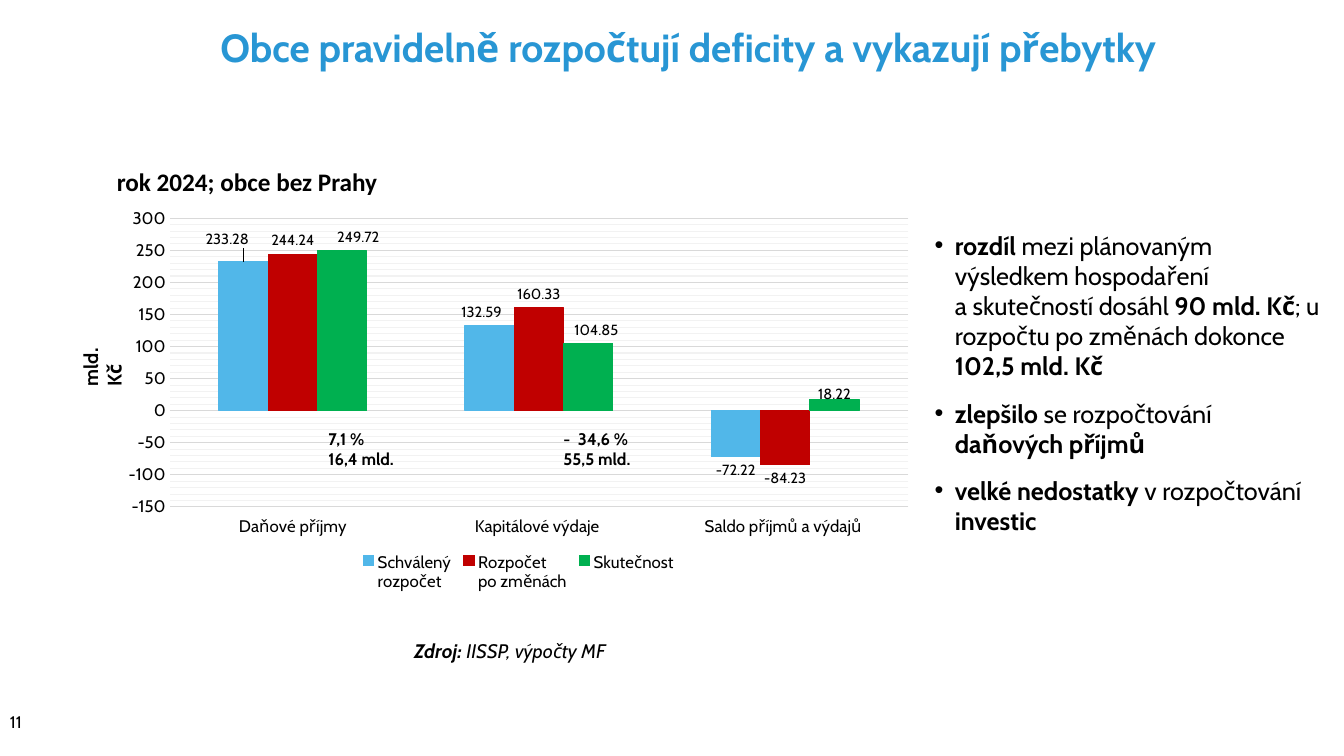
from dataclasses import dataclass

from lxml import etree
from pptx import Presentation
from pptx.chart.data import CategoryChartData
from pptx.dml.color import RGBColor
from pptx.enum import chart as ch, text
from pptx.oxml import ns
from pptx.util import Inches, Pt

BLACK = RGBColor(0x00, 0x00, 0x00)
TITLE_BLUE = RGBColor(0x28, 0x96, 0xD4)
SKY = RGBColor(0x51, 0xB7, 0xE9)
RED = RGBColor(0xC0, 0x00, 0x00)
GREEN = RGBColor(0x00, 0xB0, 0x50)
GRID = RGBColor(0xD9, 0xD9, 0xD9)
MINOR_GRID = RGBColor(0xF2, 0xF2, 0xF2)
FONT = "Cabin"


@dataclass
class Run:
    text: str
    bold: bool = False


@dataclass
class Label:
    left: float
    top: float
    width: float
    height: float
    lines: list[list[Run]]
    size: float = 12
    font: str = FONT
    italic: bool = False
    rotation: float = 0
    wrap: bool = False
    anchor: text.MSO_ANCHOR = text.MSO_ANCHOR.TOP


@dataclass
class Bars:
    name: str
    values: list[float]
    color: RGBColor
    shifts: dict[int, tuple[float, float]]  # label offsets, as shares of the chart


LABELS = [
    Label(0, 6.95, 0.48, 0.43, [[Run("11")]], wrap=True, anchor=text.MSO_ANCHOR.MIDDLE),
    Label(1.06, 1.6, 2.81, 0.4, [[Run("rok 2024; obce bez Prahy", True)]], 18, "Calibri"),
    Label(0.5, 3.36, 0.8, 0.34, [[Run("mld. Kč", True)]], 14, rotation=270, wrap=True),
    Label(4.01, 6.29, 2.22, 0.34,
          [[Run("Zdroj: ", True), Run("IISSP, výpočty MF")]], 14, italic=True),
    Label(3.16, 4.2, 0.93, 0.5, [[Run("7,1 %", True)], [Run("16,4 mld.", True)]]),
    Label(5.49, 4.2, 0.93, 0.5, [[Run("-  34,6 %", True)], [Run("55,5 mld.", True)]]),
]

BULLETS = [
    [Run("rozdíl", True), Run(" mezi plánovaným výsledkem hospodaření a\u00a0skutečností dosáhl "),
     Run("90\u00a0mld. Kč", True), Run("; u rozpočtu po změnách dokonce "),
     Run("102,5 mld. Kč", True)],
    [Run("zlepšilo ", True), Run("se rozpočtování "), Run("daňových příjmů", True)],
    [Run("velké nedostatky ", True), Run("v rozpočtování "), Run("investic", True)],
]

CATEGORIES = ["Daňové příjmy", "Kapitálové výdaje ", "Saldo příjmů a výdajů "]
SERIES = [
    Bars("Schválený\nrozpočet\n", [233.28, 132.59, -72.22], SKY,
         {0: (-0.02, -0.02), 1: (-0.01, 0)}),
    Bars("Rozpočet\npo změnách\n", [244.24, 160.33, -84.23], RED, {}),
    Bars("Skutečnost\n", [249.72, 104.85, 18.22], GREEN,
         {0: (0.02, 0), 1: (0.01, 0), 2: (0, 0.02)}),
]


def style(font, size: float, color: RGBColor = BLACK, name: str = FONT) -> None:
    font.size = Pt(size)
    font.name = name
    font.color.rgb = color


def fill_runs(p, runs: list[Run], size: float, name: str = FONT, italic: bool = False) -> None:
    for run in runs:
        r = p.add_run()
        r.text = run.text
        style(r.font, size, name=name)
        r.font.bold = run.bold
        r.font.italic = italic


def place(sp, left: float, top: float, width: float, height: float) -> None:
    sp.left, sp.top = Inches(left), Inches(top)
    sp.width, sp.height = Inches(width), Inches(height)


def add_label(s, label: Label) -> None:
    sp = s.shapes.add_textbox(Inches(label.left), Inches(label.top),
                              Inches(label.width), Inches(label.height))
    sp.rotation = label.rotation
    tf = sp.text_frame
    tf.word_wrap = label.wrap
    tf.vertical_anchor = label.anchor
    for i, runs in enumerate(label.lines):
        p = tf.add_paragraph() if i else tf.paragraphs[0]
        fill_runs(p, runs, label.size, label.font, label.italic)


def add_bullets(sp) -> None:
    tf = sp.text_frame
    tf.word_wrap = True
    tf.auto_size = text.MSO_AUTO_SIZE.NONE
    for i, runs in enumerate(BULLETS):
        p = tf.add_paragraph() if i else tf.paragraphs[0]
        p.space_before, p.space_after = Pt(0), Pt(12)
        pPr = p._p.get_or_add_pPr()
        pPr.set("marL", str(Inches(0.2)))
        pPr.set("indent", str(-Inches(0.2)))
        etree.SubElement(pPr, ns.qn("a:buChar")).set("char", "•")
        fill_runs(p, runs, 18)


def manual_layout(**values):
    layout = etree.Element(ns.qn("c:layout"))
    manual = etree.SubElement(layout, ns.qn("c:manualLayout"))
    for tag, value in values.items():
        etree.SubElement(manual, ns.qn(f"c:{tag}")).set("val", str(value))
    return layout


def format_series(series, bars: Bars) -> None:
    series.invert_if_negative = False
    series.format.fill.solid()
    series.format.fill.fore_color.rgb = bars.color
    series.format.line.color.rgb = bars.color
    series.format.line.width = Pt(0.75)
    labels = series.data_labels
    labels.show_value = True
    labels.number_format = "#,##0.00;[Red]-#,##0.00"
    labels.number_format_is_linked = False
    labels.position = ch.XL_LABEL_POSITION.OUTSIDE_END
    style(labels.font, 10.5)
    for i, (dx, dy) in bars.shifts.items():
        point_label = series.points[i].data_label
        point_label.position = ch.XL_LABEL_POSITION.OUTSIDE_END
        style(point_label.font, 10.5)
        dLbl = labels._element.xpath(f"c:dLbl[c:idx/@val='{i}']")[0]
        dLbl.insert(1, manual_layout(x=dx, y=dy))


def color_minor_gridlines(axis, color: RGBColor) -> None:
    grid = axis._element.find(ns.qn("c:minorGridlines"))
    spPr = etree.SubElement(grid, ns.qn("c:spPr"))
    ln = etree.SubElement(spPr, ns.qn("a:ln"), w=str(Pt(0.75)))
    fill = etree.SubElement(ln, ns.qn("a:solidFill"))
    etree.SubElement(fill, ns.qn("a:srgbClr"), val=str(color))


def add_budget_chart(s) -> None:
    data = CategoryChartData(number_format="#,##0.00")
    data.categories = CATEGORIES
    for bars in SERIES:
        data.add_series(bars.name, bars.values)
    chart = s.shapes.add_chart(ch.XL_CHART_TYPE.COLUMN_CLUSTERED, Inches(1.12), Inches(2),
                               Inches(8.05), Inches(4.15), data).chart
    chart.has_title = False
    style(chart.font, 10)
    plot = chart.plots[0]
    plot.gap_width, plot.overlap = 199, 0
    plot.vary_by_categories = False
    for series, bars in zip(plot.series, SERIES):
        format_series(series, bars)

    # Axes
    cat, val = chart.category_axis, chart.value_axis
    for axis in (cat, val):
        style(axis.tick_labels.font, 12)
        axis.major_tick_mark = axis.minor_tick_mark = ch.XL_TICK_MARK.NONE
    cat.tick_label_position = ch.XL_TICK_LABEL_POSITION.LOW
    val.minimum_scale, val.maximum_scale = -150, 300
    val.major_unit, val.minor_unit = 50, 10
    val.tick_labels.number_format = "#,##0"
    val.tick_labels.number_format_is_linked = False
    val.format.line.fill.background()
    val.has_major_gridlines = val.has_minor_gridlines = True
    for line in (cat.format.line, val.major_gridlines.format.line):
        line.color.rgb = GRID
        line.width = Pt(0.75)
    color_minor_gridlines(val, MINOR_GRID)

    # Legend and plot position
    chart.has_legend = True
    legend = chart.legend
    legend.position = ch.XL_LEGEND_POSITION.BOTTOM
    legend.include_in_layout = False
    style(legend.font, 12)
    for old in legend._element.findall(ns.qn("c:layout")):
        legend._element.remove(old)
    legend._element.find(ns.qn("c:legendPos")).addnext(
        manual_layout(xMode="edge", yMode="edge", x=0.3, y=0.84, w=0.4, h=0.15))
    area = chart._chartSpace.chart.plotArea
    for old in area.findall(ns.qn("c:layout")):
        area.remove(old)
    area.insert(0, manual_layout(layoutTarget="inner", xMode="edge", yMode="edge",
                                 x=0.07, y=0.04, w=0.91, h=0.69))


# Slide
prs = Presentation()
prs.slide_width, prs.slide_height = Inches(13.33), Inches(7.5)
s = prs.slides.add_slide(prs.slide_layouts[1])
title, body = s.shapes.title, s.placeholders[1]
place(title, 0.92, 0, 11.81, 0.92)
title.text_frame.text = "Obce pravidelně rozpočtují deficity a vykazují přebytky"
p = title.text_frame.paragraphs[0]
p.alignment = text.PP_ALIGN.CENTER
style(p.runs[0].font, 28, TITLE_BLUE)
p.runs[0].font.bold = True
place(body, 9.17, 2.23, 4.08, 3.17)
add_bullets(body)
add_budget_chart(s)
for label in LABELS:
    add_label(s, label)
prs.save("out.pptx")
